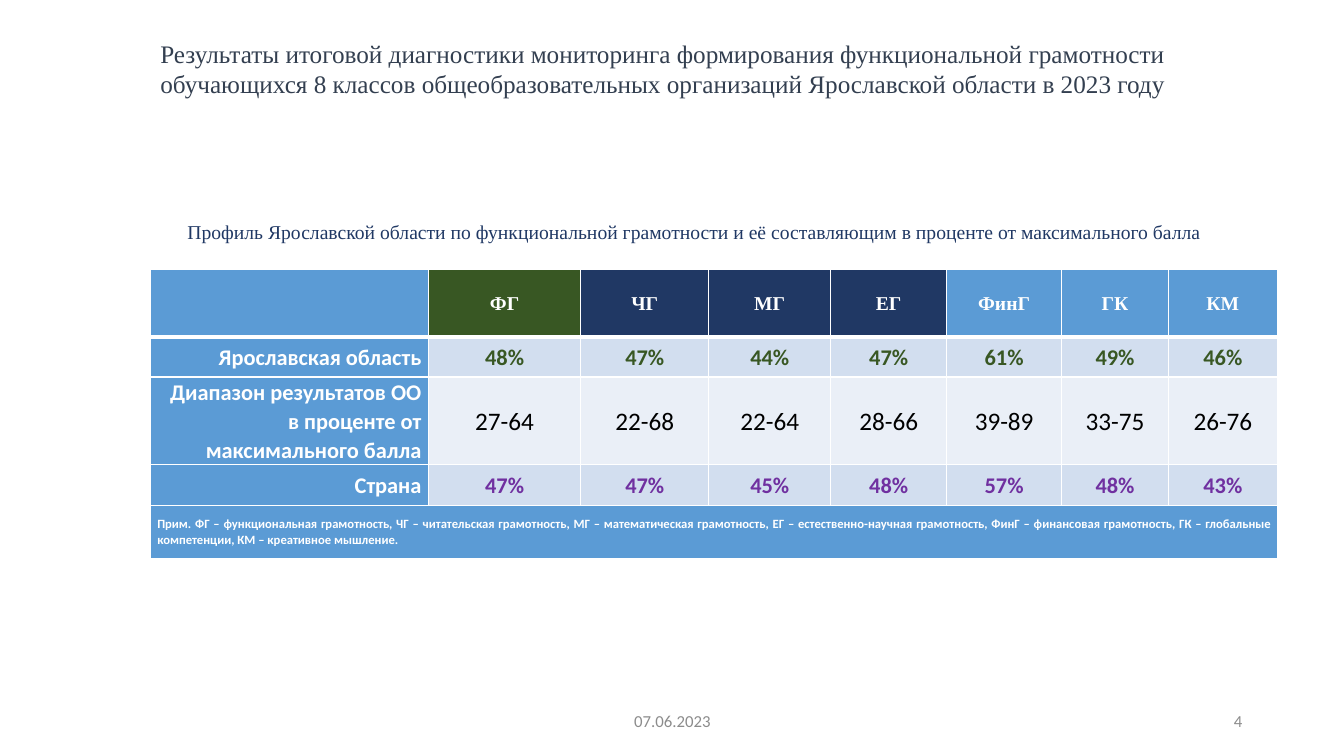
from dataclasses import dataclass

from lxml import etree
from pptx import Presentation
from pptx.dml.color import RGBColor
from pptx.enum.text import MSO_ANCHOR, MSO_AUTO_SIZE, PP_ALIGN
from pptx.oxml.ns import qn
from pptx.util import Inches, Pt

LEFT, CENTER, RIGHT, JUSTIFY = PP_ALIGN.LEFT, PP_ALIGN.CENTER, PP_ALIGN.RIGHT, PP_ALIGN.JUSTIFY
TOP, MIDDLE = MSO_ANCHOR.TOP, MSO_ANCHOR.MIDDLE
NO_AUTOFIT = MSO_AUTO_SIZE.NONE


@dataclass(frozen=True)
class Theme:
    serif: str = "Times New Roman"
    sans: str = "Calibri"
    white: str = "FFFFFF"
    black: str = "000000"
    slate: str = "333F50"
    navy: str = "203864"
    green: str = "385723"
    purple: str = "7030A0"
    grey: str = "8C8C8C"
    blue: str = "5B9BD5"
    band_dark: str = "D2DEEF"
    band_light: str = "EAEFF7"
    large: int = 18
    label: int = 16
    caption: int = 14
    footer: int = 12
    note: int = 9


THEME = Theme()


@dataclass(frozen=True)
class Style:
    font: str
    size: int
    color: str
    bold: bool = False
    align: PP_ALIGN = LEFT


@dataclass(frozen=True)
class TextBox:
    text: str
    left: float
    top: float
    width: float
    height: float
    style: Style
    anchor: MSO_ANCHOR = TOP


@dataclass(frozen=True)
class DataRow:
    label: str
    values: list[str]
    style: Style
    fill: str


# Slide content
HEADING = TextBox(
    "Результаты итоговой диагностики мониторинга формирования функциональной грамотности "
    "обучающихся 8 классов общеобразовательных организаций Ярославской области в 2023 году",
    1.49, 0.33, 10.81, 0.71, Style(THEME.serif, THEME.large, THEME.slate))
TEXT_BOXES = [
    TextBox("Профиль Ярославской области по функциональной грамотности и её составляющим "
            "в проценте от максимального балла",
            1.76, 2.13, 10.55, 0.34, Style(THEME.serif, THEME.caption, THEME.navy)),
    TextBox("07.06.2023", 4.42, 6.95, 4.5, 0.4,
            Style(THEME.sans, THEME.footer, THEME.grey, align=CENTER), MIDDLE),
    TextBox("4", 9.42, 6.95, 3, 0.4,
            Style(THEME.sans, THEME.footer, THEME.grey, align=RIGHT), MIDDLE),
]

COLUMN_WIDTHS = [2.76, 1.51, 1.27, 1.21, 1.15, 1.14, 1.06, 1.08]
ROW_HEIGHTS = [0.67, 0.4, 0.85, 0.4, 0.53]
HEADERS = ["", "ФГ", "ЧГ", "МГ", "ЕГ", "ФинГ", "ГК", "КМ"]
HEADER_FILLS = [THEME.blue, THEME.green] + [THEME.navy] * 3 + [THEME.blue] * 3
HEADER_STYLE = Style(THEME.serif, THEME.caption, THEME.white, True, CENTER)
LABEL_STYLE = Style(THEME.sans, THEME.label, THEME.white, True, RIGHT)
NOTE_STYLE = Style(THEME.sans, THEME.note, THEME.white, True, JUSTIFY)
DATA_ROWS = [
    DataRow("Ярославская область", ["48%", "47%", "44%", "47%", "61%", "49%", "46%"],
            Style(THEME.sans, THEME.label, THEME.green, True, CENTER), THEME.band_dark),
    DataRow("Диапазон результатов ОО в проценте от максимального балла",
            ["27-64", "22-68", "22-64", "28-66", "39-89", "33-75", "26-76"],
            Style(THEME.sans, THEME.large, THEME.black, False, CENTER), THEME.band_light),
    DataRow("Страна", ["47%", "47%", "45%", "48%", "57%", "48%", "43%"],
            Style(THEME.sans, THEME.label, THEME.purple, True, CENTER), THEME.band_dark),
]
NOTE = ("Прим. ФГ – функциональная грамотность, ЧГ – читательская грамотность, "
        "МГ – математическая грамотность, ЕГ – естественно-научная грамотность, "
        "ФинГ – финансовая грамотность, ГК – глобальные компетенции, КМ – креативное мышление.")


def write_text(frame, text: str, style: Style) -> None:
    para = frame.paragraphs[0]
    para.alignment = style.align
    if text:
        span = para.add_run()
        span.text = text
        span.font.name = style.font
        span.font.size = Pt(style.size)
        span.font.bold = style.bold
        span.font.color.rgb = RGBColor.from_string(style.color)


def fill_box(box, item: TextBox) -> None:
    box.left, box.top = Inches(item.left), Inches(item.top)
    box.width, box.height = Inches(item.width), Inches(item.height)
    frame = box.text_frame
    frame.word_wrap = True
    frame.auto_size = NO_AUTOFIT
    frame.vertical_anchor = item.anchor
    write_text(frame, item.text, item.style)


def set_borders(cell, bottom_width: float) -> None:
    properties = cell._tc.get_or_add_tcPr()
    for side, width in (("lnL", 1), ("lnR", 1), ("lnT", 1), ("lnB", bottom_width)):
        line = etree.SubElement(properties, qn(f"a:{side}"), w=str(Pt(width)))
        solid = etree.SubElement(line, qn("a:solidFill"))
        etree.SubElement(solid, qn("a:srgbClr"), val=THEME.white)


def fill_cell(cell, text: str, style: Style, fill: str, bottom_width: float = 1) -> None:
    set_borders(cell, bottom_width)
    cell.fill.solid()
    cell.fill.fore_color.rgb = RGBColor.from_string(fill)
    cell.margin_left = cell.margin_right = Inches(0.07)
    cell.margin_top = cell.margin_bottom = 0
    cell.vertical_anchor = MIDDLE
    write_text(cell.text_frame, text, style)
    cell.text_frame.paragraphs[0].line_spacing = 1.07


def add_results_table(page) -> None:
    table = page.shapes.add_table(
        len(ROW_HEIGHTS), len(COLUMN_WIDTHS), Inches(1.49), Inches(2.67),
        Inches(sum(COLUMN_WIDTHS)), Inches(sum(ROW_HEIGHTS))).table
    for column, width in zip(table.columns, COLUMN_WIDTHS):
        column.width = Inches(width)
    for row, height in zip(table.rows, ROW_HEIGHTS):
        row.height = Inches(height)

    # Header row
    for index, (header, fill) in enumerate(zip(HEADERS, HEADER_FILLS)):
        fill_cell(table.cell(0, index), header, HEADER_STYLE, fill, bottom_width=3)

    # Data rows
    for row_index, data in enumerate(DATA_ROWS, start=1):
        fill_cell(table.cell(row_index, 0), data.label, LABEL_STYLE, THEME.blue)
        for index, value in enumerate(data.values, start=1):
            fill_cell(table.cell(row_index, index), value, data.style, data.fill)

    # Note across the full width
    last = len(ROW_HEIGHTS) - 1
    note_cell = table.cell(last, 0)
    note_cell.merge(table.cell(last, len(COLUMN_WIDTHS) - 1))
    fill_cell(note_cell, NOTE, NOTE_STYLE, THEME.blue)


def main() -> None:
    deck = Presentation()
    deck.slide_width, deck.slide_height = Inches(13.33), Inches(7.5)
    page = deck.slides.add_slide(deck.slide_layouts.get_by_name("Title Only"))
    fill_box(page.shapes.title, HEADING)
    add_results_table(page)
    for item in TEXT_BOXES:
        fill_box(page.shapes.add_textbox(0, 0, 0, 0), item)
    deck.save("out.pptx")


if __name__ == "__main__":
    main()
